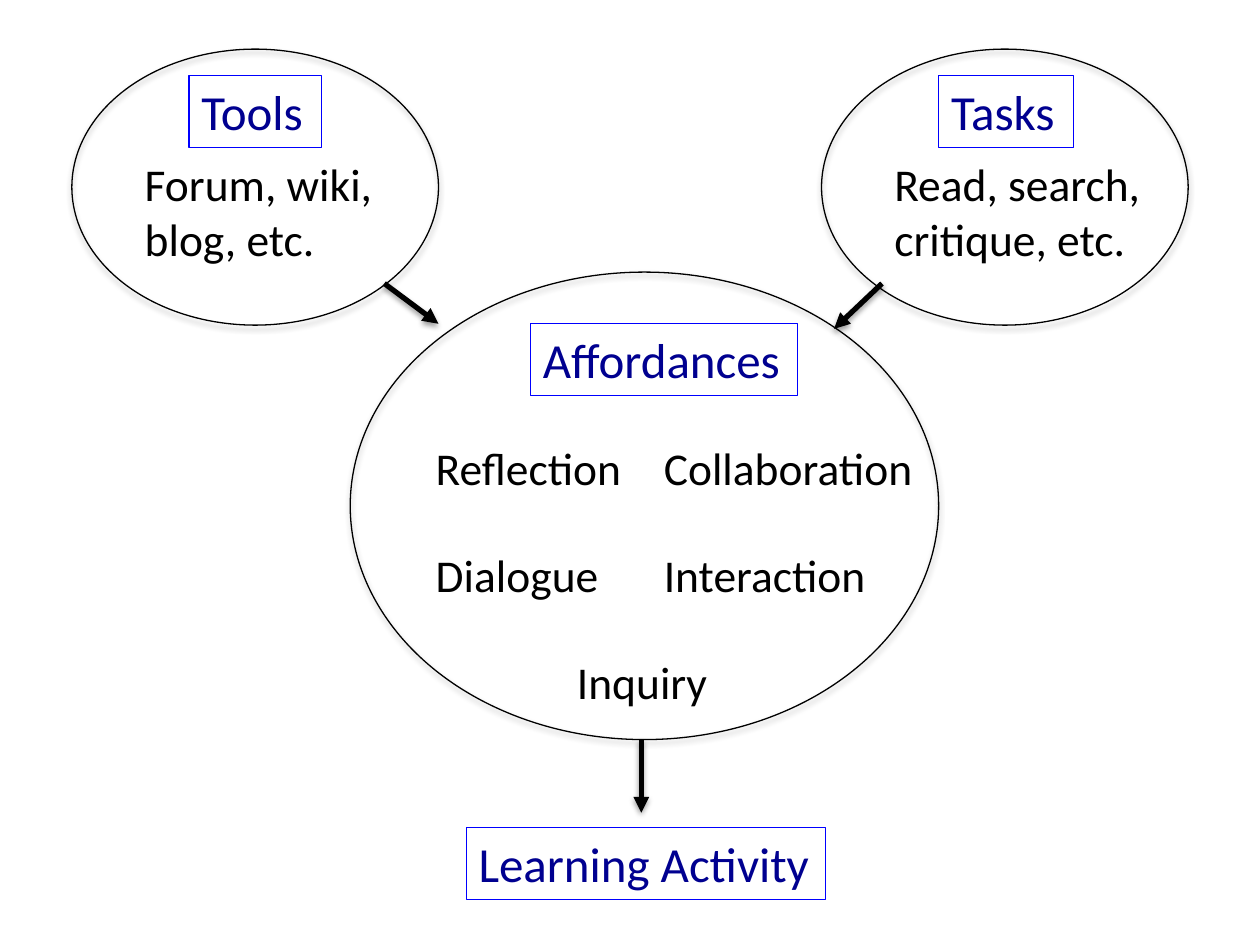
"""Build a diagram of tools and tasks leading to affordances and a learning activity."""
from typing import NamedTuple

from lxml.etree import SubElement
from pptx import Presentation
from pptx.dml.color import RGBColor
from pptx.enum.shapes import MSO_CONNECTOR as Connector, MSO_SHAPE as Preset
from pptx.enum.text import MSO_ANCHOR as Anchor, MSO_AUTO_SIZE as AutoSize, PP_ALIGN as Align
from pptx.oxml.ns import qn
from pptx.slide import Slide
from pptx.util import Inches, Pt

BLACK = RGBColor(0x00, 0x00, 0x00)
BLUE = RGBColor(0x00, 0x00, 0xFF)
NAVY = RGBColor(0x00, 0x00, 0x90)
FONT = "Calibri"
HEADING_HEIGHT = 0.57
LINE_HEIGHT = 0.54
ROW_TOP, ROW_STEP = 3.44, 0.85


class Oval(NamedTuple):
    left: float
    top: float
    width: float
    height: float


class Label(NamedTuple):
    text: str
    left: float
    top: float
    width: float
    height: float = LINE_HEIGHT


class Arrow(NamedTuple):
    start: tuple[float, float]
    end: tuple[float, float]


def row_top(row: int) -> float:
    return ROW_TOP + row * ROW_STEP


OVALS = [
    Oval(2.78, 2.16, 4.67, 3.71),
    Oval(0.57, 0.39, 2.91, 2.19),
    Oval(6.52, 0.39, 2.91, 2.19),
]
HEADINGS = [
    Label("Affordances", 4.21, 2.57, 2.12, HEADING_HEIGHT),
    Label("Tools", 1.5, 0.6, 1.05, HEADING_HEIGHT),
    Label("Tasks", 7.45, 0.6, 1.07, HEADING_HEIGHT),
    Label("Learning Activity", 3.7, 6.57, 2.85, HEADING_HEIGHT),
]
DETAILS = [
    Label("Reflection", 3.36, row_top(0), 1.7),
    Label("Collaboration", 5.17, row_top(0), 2.2),
    Label("Dialogue", 3.36, row_top(1), 1.51),
    Label("Interaction", 5.17, row_top(1), 1.83),
    Label("Inquiry", 4.48, row_top(2), 1.25),
    Label("Forum, wiki, blog, etc.", 1.05, 1.19, 2.09, 0.98),
    Label("Read, search, critique, etc.", 7, 1.19, 2.43, 0.98),
]
ARROWS = [
    Arrow((3.05, 2.25), (3.48, 2.57)),
    Arrow((7, 2.25), (6.62, 2.61)),
    Arrow((5.09, 5.87), (5.09, 6.45)),
]


def add_shadow(effects, distance: float, opacity: int) -> None:
    shadow = SubElement(effects, qn("a:outerShdw"), blurRad=str(Pt(3.15)),
                        dist=str(Pt(distance)), dir="5400000", rotWithShape="0")
    color = SubElement(shadow, qn("a:srgbClr"), val=str(BLACK))
    SubElement(color, qn("a:alpha"), val=str(opacity * 1000))


def add_outline(slide: Slide, preset: Preset, box: Oval | Label, color: RGBColor):
    shape = slide.shapes.add_shape(preset, Inches(box.left), Inches(box.top),
                                   Inches(box.width), Inches(box.height))
    shape.fill.background()
    shape.line.color.rgb = color
    shape.line.width = Pt(0.75)
    shape.shadow.inherit = False
    return shape


def write_text(shape, text: str, size: int, color: RGBColor) -> None:
    frame = shape.text_frame
    frame.word_wrap = True
    frame.auto_size = AutoSize.SHAPE_TO_FIT_TEXT
    frame.vertical_anchor = Anchor.TOP
    paragraph = frame.paragraphs[0]
    paragraph.alignment = Align.LEFT
    run = paragraph.add_run()
    run.text = text
    run.font.name = FONT
    run.font.size = Pt(size)
    run.font.color.rgb = color


def add_oval(slide: Slide, oval: Oval) -> None:
    shape = add_outline(slide, Preset.OVAL, oval, BLACK)
    add_shadow(shape._element.spPr.find(qn("a:effectLst")), 1.8, 35)


def add_heading(slide: Slide, label: Label) -> None:
    shape = add_outline(slide, Preset.RECTANGLE, label, BLUE)
    write_text(shape, label.text, 28, NAVY)


def add_detail(slide: Slide, label: Label) -> None:
    shape = slide.shapes.add_textbox(Inches(label.left), Inches(label.top),
                                     Inches(label.width), Inches(label.height))
    write_text(shape, label.text, 26, BLACK)


def add_arrow(slide: Slide, arrow: Arrow) -> None:
    points = [Inches(value) for value in arrow.start + arrow.end]
    connector = slide.shapes.add_connector(Connector.STRAIGHT, *points)
    connector.line.color.rgb = BLACK
    connector.line.width = Pt(3)
    SubElement(connector.line._get_or_add_ln(), qn("a:tailEnd"), type="triangle")
    add_shadow(SubElement(connector._element.spPr, qn("a:effectLst")), 1.6, 38)


def main() -> None:
    presentation = Presentation()
    presentation.slide_width = Inches(10)
    presentation.slide_height = Inches(7.5)
    slide = presentation.slides.add_slide(presentation.slide_layouts[6])
    for oval in OVALS:
        add_oval(slide, oval)
    for heading in HEADINGS:
        add_heading(slide, heading)
    for detail in DETAILS:
        add_detail(slide, detail)
    for arrow in ARROWS:
        add_arrow(slide, arrow)
    presentation.save("out.pptx")


if __name__ == "__main__":
    main()
